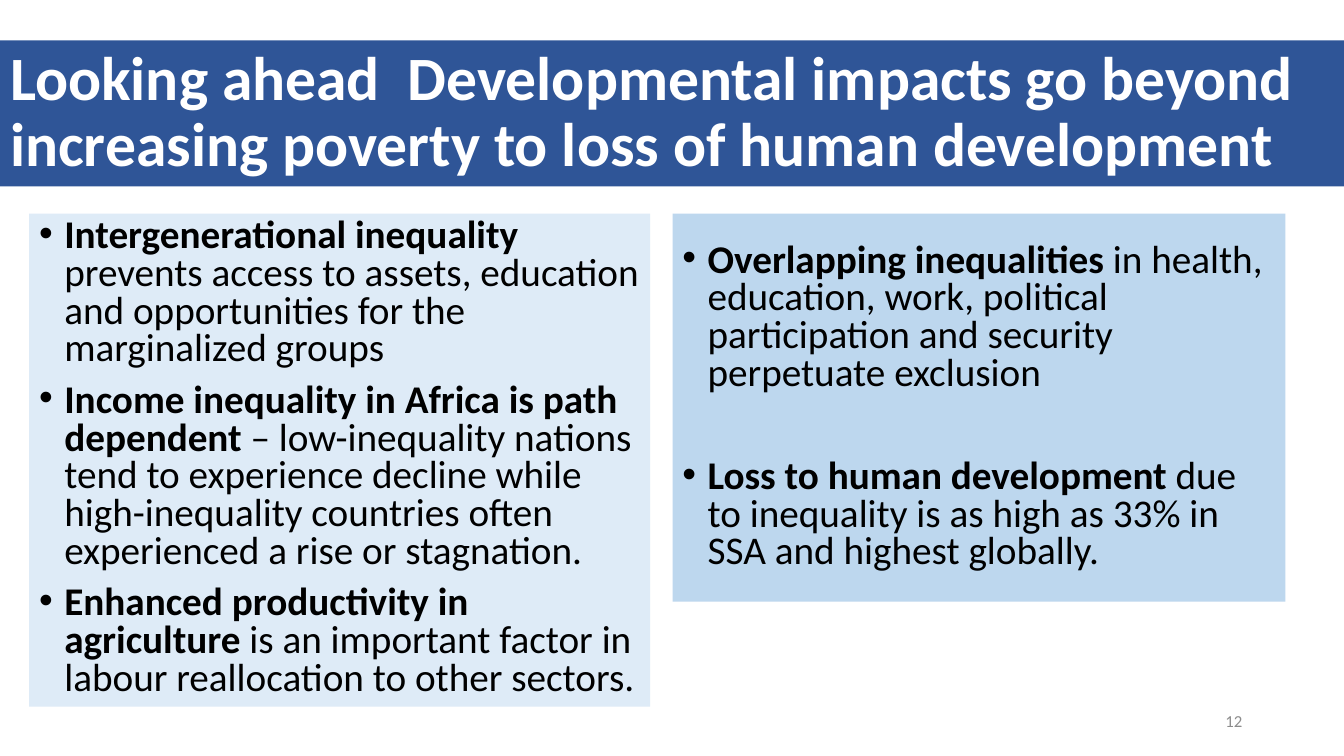
from lxml import etree
from pptx import Presentation
from pptx.dml.color import RGBColor
from pptx.enum.shapes import MSO_SHAPE
from pptx.enum.text import MSO_ANCHOR, MSO_AUTO_SIZE, PP_ALIGN
from pptx.oxml.ns import qn
from pptx.util import Inches, Pt


def rgb(code):
    return RGBColor.from_string(code)


def add_run(p, text, size, color, bold=False):
    r = p.add_run()
    r.text = text
    r.font.name = "Calibri"
    r.font.size = Pt(size)
    r.font.bold = bold
    r.font.color.rgb = rgb(color)


prs = Presentation()
prs.slide_width, prs.slide_height = Inches(13.33), Inches(7.5)
slide = prs.slides.add_slide(prs.slide_layouts[5])

# Title band
title = slide.shapes.title
title.left, title.top = Inches(0), Inches(0.4)
title.width, title.height = Inches(13.33), Inches(1.45)
title.fill.solid()
title.fill.fore_color.rgb = rgb("2F5597")
tf = title.text_frame
tf.auto_size = MSO_AUTO_SIZE.NONE
tf.vertical_anchor = MSO_ANCHOR.MIDDLE
p = tf.paragraphs[0]
p.alignment = PP_ALIGN.LEFT
p.line_spacing = 0.9
add_run(p, "Looking ahead  Developmental impacts go beyond increasing poverty "
        "to loss of human development", 44, "FFFFFF", True)

# Panels: left, width, height, fill, anchor, space between points, points
panels = [
    (0.29, 6.16, 4.89, "DEEBF7", MSO_ANCHOR.TOP, 10, [
        ("Intergenerational inequality ",
         "prevents access to assets, education and opportunities for the "
         "marginalized groups"),
        ("Income inequality in Africa is path dependent",
         " – low-inequality nations tend to experience decline while "
         "high-inequality countries often experienced a rise or stagnation."),
        ("Enhanced productivity in agriculture",
         " is an important factor in labour reallocation to other sectors."),
    ]),
    (6.67, 6.08, 3.85, "BDD7EE", MSO_ANCHOR.MIDDLE, 47, [
        ("Overlapping inequalities ",
         "in health, education, work, political participation and security "
         "perpetuate exclusion"),
        ("Loss to human development ",
         "due to inequality is as high as 33% in SSA and highest globally."),
    ]),
]
for left, width, height, fill, anchor, gap, points in panels:
    sp = slide.shapes.add_shape(MSO_SHAPE.RECTANGLE, Inches(left), Inches(2.12),
                                Inches(width), Inches(height))
    sp.shadow.inherit = False
    sp.fill.solid()
    sp.fill.fore_color.rgb = rgb(fill)
    sp.line.fill.background()
    tf = sp.text_frame
    tf.word_wrap = True
    tf.vertical_anchor = anchor
    for i, (lead, rest) in enumerate(points):
        p = tf.add_paragraph() if i else tf.paragraphs[0]
        p.alignment = PP_ALIGN.LEFT
        p.line_spacing = 0.8
        p.space_before = Pt(gap if i else 10)
        pPr = p._p.get_or_add_pPr()
        pPr.set("marL", str(Inches(0.25)))
        pPr.set("indent", str(Inches(-0.25)))
        etree.SubElement(pPr, qn("a:buFont")).set("typeface", "Arial")
        etree.SubElement(pPr, qn("a:buChar")).set("char", "•")
        add_run(p, lead, 28, "000000", True)
        add_run(p, rest, 28, "000000")

# Slide number
number = slide.shapes.add_textbox(Inches(9.42), Inches(6.95), Inches(3), Inches(0.4))
tf = number.text_frame
tf.word_wrap = True
tf.vertical_anchor = MSO_ANCHOR.MIDDLE
p = tf.paragraphs[0]
p.alignment = PP_ALIGN.RIGHT
add_run(p, "12", 12, "8C8C8C")

prs.save("out.pptx")
